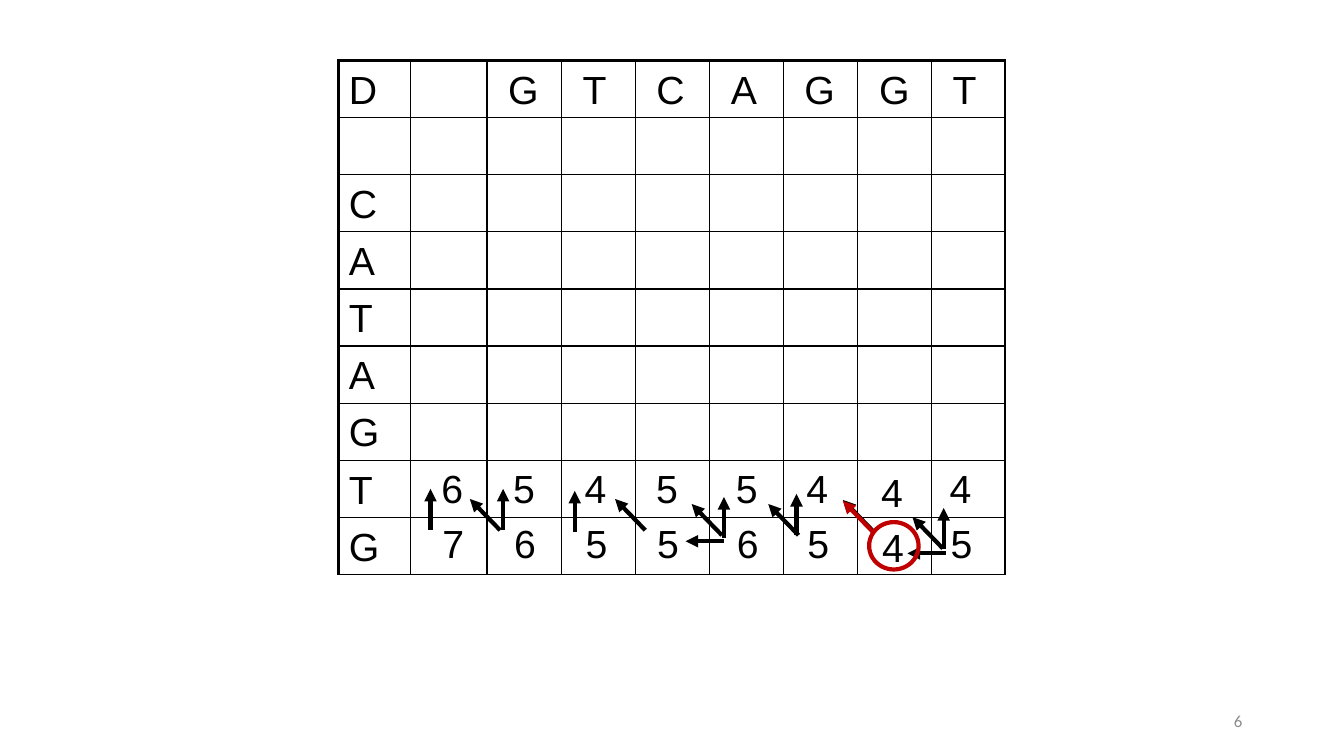
from lxml import etree
from pptx import Presentation
from pptx.dml.color import RGBColor
from pptx.enum.shapes import MSO_CONNECTOR, MSO_SHAPE
from pptx.enum.text import MSO_ANCHOR, PP_ALIGN
from pptx.oxml.ns import qn
from pptx.util import Inches, Pt

STRAIGHT = MSO_CONNECTOR.STRAIGHT
OVAL = MSO_SHAPE.OVAL
BOTTOM, MIDDLE, TOP = MSO_ANCHOR.BOTTOM, MSO_ANCHOR.MIDDLE, MSO_ANCHOR.TOP
LEFT, RIGHT = PP_ALIGN.LEFT, PP_ALIGN.RIGHT

BLACK, RED, GRAY = "000000", "C00000", "8C8C8C"
THIN, THICK = 1, 2.25
COLUMN_WIDTHS = [0.71, 0.76, 0.74, 0.73, 0.74, 0.73, 0.74, 0.73, 0.73]
TOP_SEQUENCE = "GTCAGGT"
SIDE_SEQUENCE = "CATAGTG"
ROW_COUNT = len(SIDE_SEQUENCE) + 2

SCORE_OFFSETS = [
    (0, 0), (0.71, 0), (1.42, 0), (2.13, 0),
    (2.92, 0), (3.62, 0), (4.36, 0.04), (5.04, 0),
]
STEPS = {"up": (0, -0.41), "diagonal": (-0.3, -0.31), "left": (-0.38, 0)}
ARROWS = [
    ("up", 4.27, 5.26, BLACK),
    ("diagonal", 4.96, 5.26, BLACK),
    ("up", 4.99, 5.26, BLACK),
    ("up", 5.7, 5.28, BLACK),
    ("diagonal", 6.4, 5.26, BLACK),
    ("left", 7.18, 5.37, BLACK),
    ("up", 7.18, 5.34, BLACK),
    ("diagonal", 7.16, 5.31, BLACK),
    ("up", 7.9, 5.31, BLACK),
    ("diagonal", 7.92, 5.31, BLACK),
    ("diagonal", 8.66, 5.27, BLACK),
    ("diagonal", 8.66, 5.28, RED),
    ("left", 9.38, 5.49, BLACK),
    ("up", 9.36, 5.45, BLACK),
    ("diagonal", 9.35, 5.44, BLACK),
]


def color(value):
    """Return the colour for a hex string."""
    return RGBColor.from_string(value)


def write(text_frame, text, size=28, font_name="Arial", hex_color=BLACK, alignment=LEFT):
    """Put one formatted paragraph into a text frame."""
    text_frame.text = text
    paragraph = text_frame.paragraphs[0]
    paragraph.alignment = alignment
    for run in paragraph.runs:
        run.font.size = Pt(size)
        run.font.name = font_name
        run.font.bold = False
        run.font.color.rgb = color(hex_color)


def add_text(slide, text, left, top, width, height, anchor=TOP, **style):
    """Add a text box with one paragraph."""
    box = slide.shapes.add_textbox(Inches(left), Inches(top), Inches(width), Inches(height))
    box.text_frame.word_wrap = True
    box.text_frame.vertical_anchor = anchor
    write(box.text_frame, text, **style)


def set_borders(cell, widths):
    """Draw the cell's borders, given their widths by side."""
    properties = cell._tc.get_or_add_tcPr()
    for side, width in widths.items():
        border = etree.SubElement(properties, qn(f"a:ln{side}"), w=str(Pt(width)))
        fill = etree.SubElement(border, qn("a:solidFill"))
        etree.SubElement(fill, qn("a:srgbClr"), val=BLACK)


def add_matrix(slide, left, top, width, height):
    """Add the alignment matrix with its two sequences."""
    column_count = len(COLUMN_WIDTHS)
    frame = slide.shapes.add_table(
        ROW_COUNT, column_count, Inches(left), Inches(top), Inches(width), Inches(height)
    )
    table = frame.table
    table.first_row = False
    table.horz_banding = False
    for column, column_width in zip(table.columns, COLUMN_WIDTHS):
        column.width = Inches(column_width)
    for row in table.rows:
        row.height = Inches(height / ROW_COUNT)
    labels = {(0, 0): "D"}
    labels.update({(0, i): letter for i, letter in enumerate(TOP_SEQUENCE, 2)})
    labels.update({(i, 0): letter for i, letter in enumerate(SIDE_SEQUENCE, 2)})
    for row in range(ROW_COUNT):
        for column in range(column_count):
            cell = table.cell(row, column)
            set_borders(cell, {
                "L": THICK if column == 0 else THIN,
                "R": THICK if column == column_count - 1 else THIN,
                "T": THICK if row == 0 else THIN,
                "B": THIN,
            })
            cell.fill.background()
            cell.vertical_anchor = BOTTOM
            cell.margin_left = Inches(0.1 if column == 0 else 0.21)
            write(cell.text_frame, labels.get((row, column), ""))


def add_scores(slide, scores, left, top):
    """Add one row of scores, starting at the given corner."""
    for score, (across, down) in zip(scores, SCORE_OFFSETS):
        add_text(slide, score, left + across, top + down, 0.45, 0.57)


def add_arrow(slide, step, start_x, start_y, hex_color):
    """Add a traceback arrow that goes one step from its start."""
    across, down = STEPS[step]
    arrow = slide.shapes.add_connector(
        STRAIGHT, Inches(start_x), Inches(start_y),
        Inches(start_x + across), Inches(start_y + down),
    )
    arrow.line.color.rgb = color(hex_color)
    arrow.line.width = Pt(3)
    etree.SubElement(arrow.line._get_or_add_ln(), qn("a:tailEnd"), type="triangle")
    etree.SubElement(arrow._element.spPr, qn("a:effectLst"))


def add_ring(slide, left, top, width, height):
    """Add the red ring around the chosen score."""
    ring = slide.shapes.add_shape(OVAL, Inches(left), Inches(top), Inches(width), Inches(height))
    ring.shadow.inherit = False
    ring.fill.background()
    ring.line.color.rgb = color(RED)
    ring.line.width = Pt(3)


def main():
    """Build and save the presentation."""
    presentation = Presentation()
    presentation.slide_width = Inches(13.33)
    presentation.slide_height = Inches(7.5)
    slide = presentation.slides.add_slide(presentation.slide_layouts[6])
    add_matrix(slide, 3.36, 0.6, sum(COLUMN_WIDTHS), 5.1)
    add_scores(slide, "65455444", 4.28, 4.56)
    add_scores(slide, "76556545", 4.29, 5.1)
    for arrow in ARROWS:
        add_arrow(slide, *arrow)
    add_ring(slide, 8.62, 5.18, 0.49, 0.47)
    add_text(slide, "6", 9.42, 6.95, 3, 0.4, anchor=MIDDLE,
             size=12, font_name="Calibri", hex_color=GRAY, alignment=RIGHT)
    presentation.save("out.pptx")


if __name__ == "__main__":
    main()
